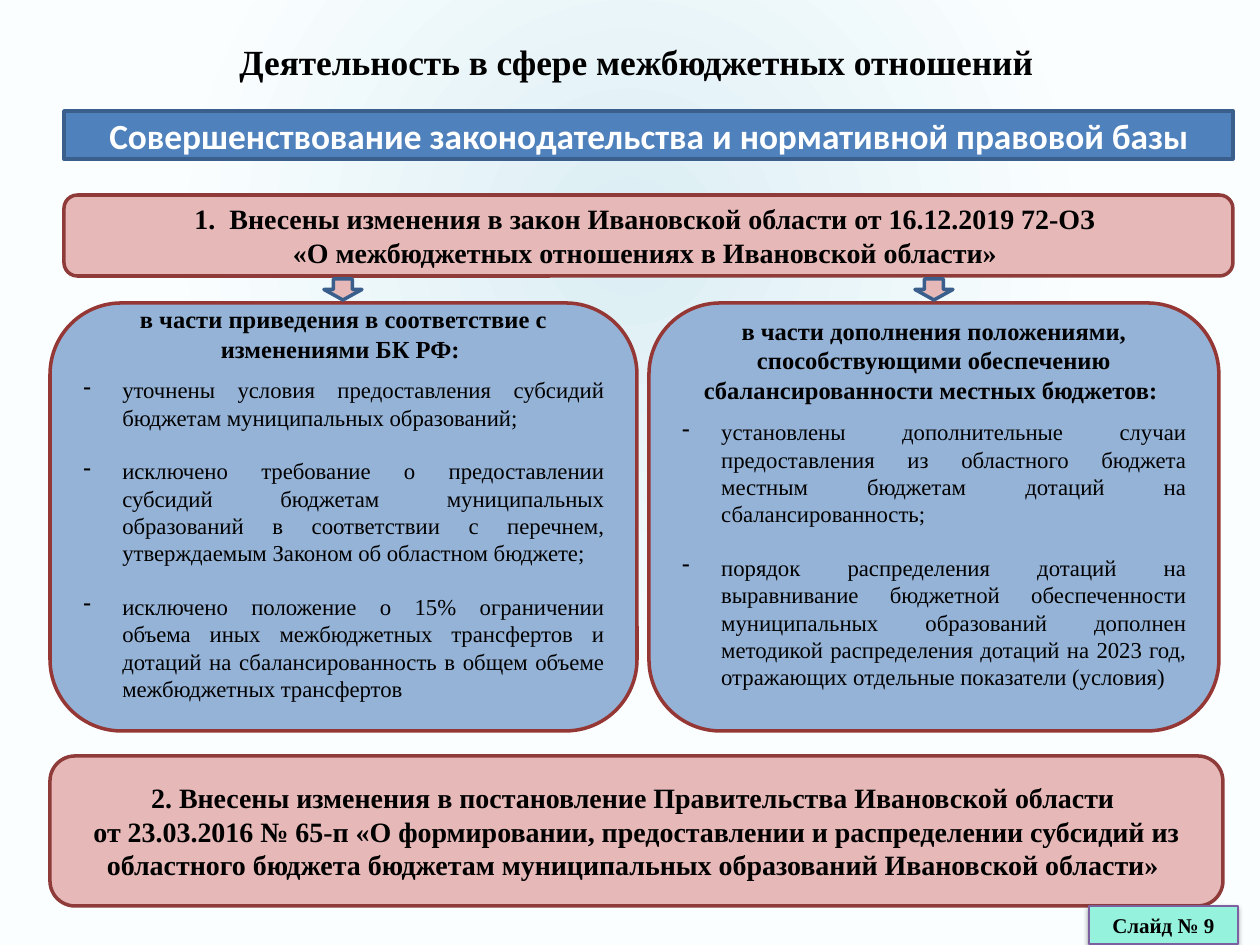
from pptx import Presentation
from pptx.dml.color import RGBColor
from pptx.enum.shapes import MSO_SHAPE
from pptx.enum.text import MSO_ANCHOR, PP_ALIGN
from pptx.oxml import parse_xml
from pptx.oxml.ns import nsdecls
from pptx.util import Pt

SCALE = 914400 / 126
SERIF = "Times New Roman"
PINK, BLUE, NAVY, MAROON = "E6B9B8", "95B3D7", "3A5F8C", "8E3B39"
NUMBER = '<a:buAutoNum {} type="arabicPeriod"/>'
DASH = '<a:buChar {} char="-"/>'

LAW = [
    "Внесены изменения в закон Ивановской области от 16.12.2019 72-ОЗ ",
    "«О межбюджетных отношениях в Ивановской области» ",
]
DECREE = (
    "2. Внесены изменения в постановление Правительства Ивановской области \v"
    "от 23.03.2016 № 65-п «О формировании, предоставлении и распределении субсидий из "
    "областного бюджета бюджетам муниципальных образований Ивановской области» "
)
COMPLIANCE = [
    "уточнены условия предоставления субсидий бюджетам муниципальных образований; ",
    "исключено требование о предоставлении субсидий бюджетам муниципальных образований "
    "в соответствии с перечнем, утверждаемым Законом об областном бюджете; ",
    "исключено положение о 15% ограничении объема иных межбюджетных трансфертов и дотаций "
    "на сбалансированность в общем объеме межбюджетных трансфертов",
]
ADDITIONS = [
    "установлены дополнительные случаи предоставления из областного бюджета "
    "местным бюджетам дотаций на сбалансированность;",
    "порядок распределения дотаций на выравнивание бюджетной обеспеченности муниципальных "
    "образований дополнен методикой распределения дотаций на 2023 год, отражающих "
    "отдельные показатели (условия)",
]


def px(length):
    """Turn pixels into EMU."""
    return round(length * SCALE)


def color(value):
    """Turn a hex string into a colour."""
    return RGBColor.from_string(value)


def paint_background(slide):
    """Fill the slide with a pale radial glow."""
    slide.background.fill.solid()
    properties = slide.background.fill._xPr
    stops = "".join(
        f'<a:gs pos="{share}000"><a:srgbClr val="{tint}"/></a:gs>'
        for share, tint in ((0, "DBEEF4"), (60, "FBFEFF"), (63, "FBFEFF"))
    )
    glow = parse_xml(
        f'<a:gradFill {nsdecls("a")} rotWithShape="1"><a:gsLst>{stops}</a:gsLst>'
        '<a:path path="circle"><a:fillToRect l="20000" t="10000" r="20000" b="60000"/>'
        "</a:path></a:gradFill>"
    )
    properties.replace(properties[0], glow)


def add_panel(slide, kind, box, fill, line, width=2):
    """Add a filled and outlined preset shape."""
    panel = slide.shapes.add_shape(kind, *map(px, box))
    panel.shadow.inherit = False
    panel.fill.solid()
    panel.fill.fore_color.rgb = color(fill)
    panel.line.color.rgb = color(line)
    panel.line.width = Pt(width)
    return panel


def write(paragraph, text, size, font=SERIF, ink="000000", bold=True, align=PP_ALIGN.CENTER):
    """Put formatted text into a paragraph."""
    paragraph.text = text
    paragraph.alignment = align
    for run in paragraph.runs:
        run.font.size = Pt(size)
        run.font.name = font
        run.font.bold = bold
        run.font.color.rgb = color(ink)


def write_lines(shape, lines, size, **style):
    """Fill a shape with vertically centred paragraphs."""
    frame = shape.text_frame
    frame.word_wrap = True
    frame.vertical_anchor = MSO_ANCHOR.MIDDLE
    for index, line in enumerate(lines):
        paragraph = frame.add_paragraph() if index else frame.paragraphs[0]
        write(paragraph, line, size, **style)


def add_marker(paragraph, marker, indent):
    """Give a paragraph a hanging bullet or number."""
    properties = paragraph._p.get_or_add_pPr()
    properties.set("marL", str(px(indent)))
    properties.set("indent", str(-px(indent)))
    properties.append(parse_xml(marker.format(nsdecls("a"))))


def add_column(slide, left, width, heading, points, gap):
    """Add an arrow and the panel of changes below it."""
    column = add_panel(slide, MSO_SHAPE.ROUNDED_RECTANGLE, (left, 303, width, 428), BLUE, "953735")
    write_lines(column, [heading], 14)
    frame = column.text_frame
    frame.margin_bottom = px(34)
    frame.paragraphs[0].space_after = Pt(gap)
    for point in points:
        paragraph = frame.add_paragraph()
        write(paragraph, point, 13, bold=False, align=PP_ALIGN.JUSTIFY)
        add_marker(paragraph, DASH, 39)
        if point != points[-1]:
            paragraph.space_after = Pt(15)
    add_panel(slide, MSO_SHAPE.DOWN_ARROW, (left + width // 2 - 19, 279, 38, 21), PINK, NAVY)


def add_slide_label(slide):
    """Add the slide number tag with its soft shadow."""
    label = add_panel(slide, MSO_SHAPE.RECTANGLE, (1089, 906, 149, 38), "95F3DD", "7D60A0", 0.75)
    write_lines(label, ["Слайд № 9"], 12)
    effects = label._element.spPr.find("{*}effectLst")
    effects.append(parse_xml(
        f'<a:outerShdw {nsdecls("a")} blurRad="{Pt(3.1)}" dist="{Pt(1.6)}" dir="5400000" '
        'rotWithShape="0"><a:srgbClr val="000000"><a:alpha val="38000"/></a:srgbClr>'
        "</a:outerShdw>"
    ))


def main():
    """Build and save the slide."""
    deck = Presentation()
    deck.slide_width, deck.slide_height = px(1260), px(945)
    slide = deck.slides.add_slide(deck.slide_layouts[6])
    paint_background(slide)

    title = slide.shapes.add_textbox(*map(px, (79, 36, 1114, 50)))
    write_lines(title, ["Деятельность в сфере межбюджетных отношений"], 20.2)

    banner = add_panel(slide, MSO_SHAPE.RECTANGLE, (64, 111, 1169, 48), "4F81BD", NAVY)
    write_lines(banner, ["Совершенствование законодательства и нормативной правовой базы"],
                20.2, font="Calibri", ink="FFFFFF")

    law = add_panel(slide, MSO_SHAPE.ROUNDED_RECTANGLE, (64, 195, 1169, 81), PINK, MAROON)
    write_lines(law, LAW, 16)
    add_marker(law.text_frame.paragraphs[0], NUMBER, 35)

    decree = add_panel(slide, MSO_SHAPE.ROUNDED_RECTANGLE, (50, 756, 1173, 150), PINK, MAROON)
    write_lines(decree, [DECREE], 16)

    add_column(slide, 50, 587,
               "в части приведения в соответствие с изменениями БК РФ: ", COMPLIANCE, 7.5)
    add_column(slide, 649, 570,
               "в части дополнения положениями, способствующими обеспечению "
               "сбалансированности местных бюджетов: ", ADDITIONS, 8)
    add_slide_label(slide)
    deck.save("out.pptx")


if __name__ == "__main__":
    main()
